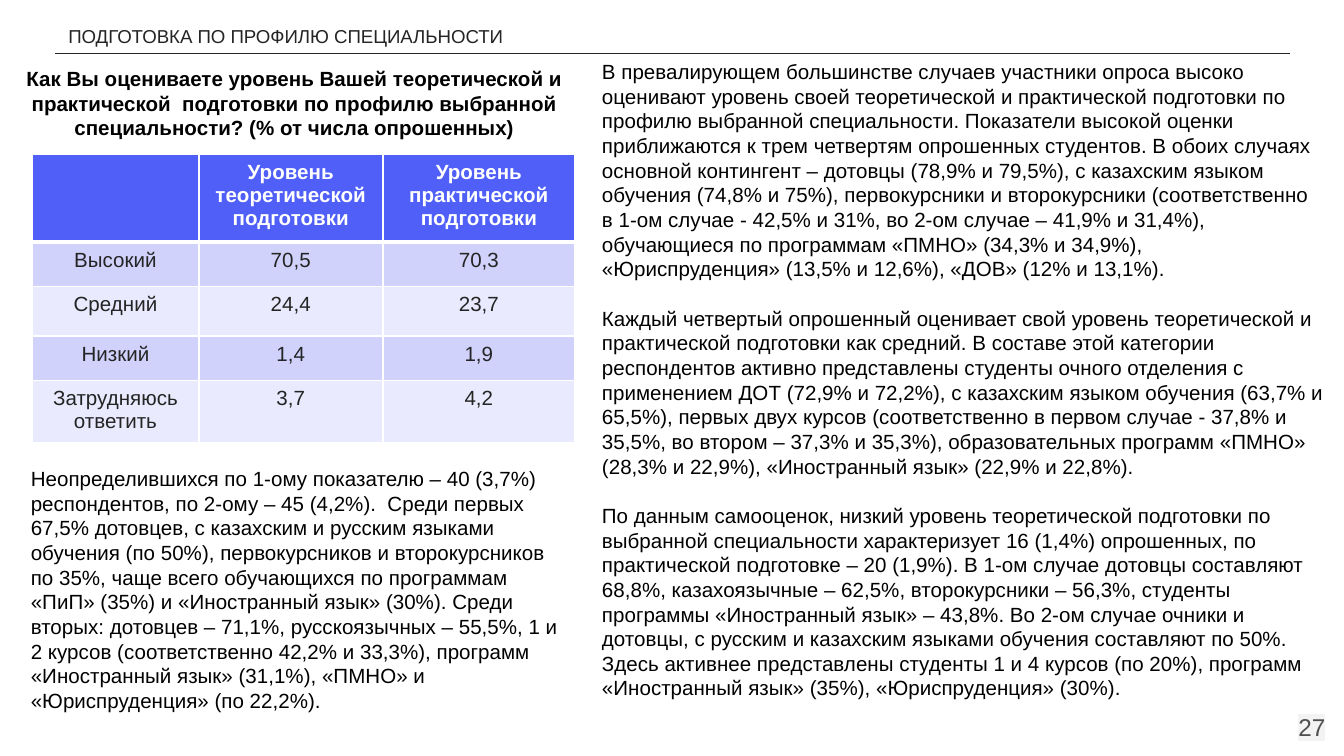
from lxml.etree import SubElement
from pptx import Presentation
from pptx.dml.color import RGBColor
from pptx.enum.shapes import MSO_CONNECTOR
from pptx.enum.text import MSO_ANCHOR, PP_ALIGN
from pptx.oxml.ns import qn
from pptx.util import Pt

BLACK = RGBColor(0x00, 0x00, 0x00)
WHITE = RGBColor(0xFF, 0xFF, 0xFF)
INK = RGBColor(0x24, 0x24, 0x24)
GREY = RGBColor(0x50, 0x50, 0x50)
PALE_GREY = RGBColor(0xF3, 0xF3, 0xF3)
BLUE = RGBColor(0x4F, 0x5F, 0xF7)
LILAC = RGBColor(0xD0, 0xD2, 0xFC)
PALE_LILAC = RGBColor(0xE9, 0xEA, 0xFD)

QUESTION = (
    "Как Вы оцениваете уровень Вашей теоретической и практической  подготовки "
    "по профилю выбранной специальности? (% от числа опрошенных)"
)
ANALYSIS = [
    "В превалирующем большинстве случаев участники опроса высоко оценивают уровень "
    "своей теоретической и практической подготовки по профилю выбранной специальности. "
    "Показатели высокой оценки приближаются к трем четвертям опрошенных студентов. "
    "В обоих случаях основной контингент – дотовцы (78,9% и 79,5%), с казахским языком "
    "обучения (74,8% и 75%), первокурсники и второкурсники (соответственно в 1-ом случае "
    "- 42,5% и 31%, во 2-ом случае – 41,9% и 31,4%), обучающиеся по программам «ПМНО» "
    "(34,3% и 34,9%), «Юриспруденция» (13,5% и 12,6%), «ДОВ» (12% и 13,1%).",
    "Каждый четвертый опрошенный оценивает свой уровень теоретической и практической "
    "подготовки как средний. В составе этой категории респондентов активно представлены "
    "студенты очного отделения с применением ДОТ (72,9% и 72,2%), с казахским языком "
    "обучения (63,7% и 65,5%), первых двух курсов (соответственно в первом случае - 37,8% "
    "и 35,5%, во втором – 37,3% и 35,3%), образовательных программ «ПМНО» (28,3% и 22,9%), "
    "«Иностранный язык» (22,9% и 22,8%).",
    "По данным самооценок, низкий уровень теоретической подготовки по выбранной "
    "специальности характеризует 16 (1,4%) опрошенных, по практической подготовке – 20 "
    "(1,9%). В 1-ом случае дотовцы составляют 68,8%, казахоязычные – 62,5%, второкурсники "
    "– 56,3%, студенты программы «Иностранный язык» – 43,8%. Во 2-ом случае очники и "
    "дотовцы, с русским и казахским языками обучения составляют по 50%. Здесь активнее "
    "представлены студенты 1 и 4 курсов (по 20%), программ «Иностранный язык» (35%), "
    "«Юриспруденция» (30%).",
]
UNDECIDED = (
    "Неопределившихся по 1-ому показателю – 40 (3,7%) респондентов, по 2-ому – 45 (4,2%).  "
    "Среди первых 67,5% дотовцев, с казахским и русским языками обучения (по 50%), "
    "первокурсников и второкурсников по 35%, чаще всего обучающихся по программам «ПиП» "
    "(35%) и «Иностранный язык» (30%). Среди вторых: дотовцев – 71,1%, русскоязычных – "
    "55,5%, 1 и 2 курсов (соответственно 42,2% и 33,3%), программ «Иностранный язык» "
    "(31,1%), «ПМНО» и «Юриспруденция» (по 22,2%)."
)
RATINGS = [
    ["", "Уровень теоретической подготовки", "Уровень практической подготовки"],
    ["Высокий", "70,5", "70,3"],
    ["Средний", "24,4", "23,7"],
    ["Низкий", "1,4", "1,9"],
    ["Затрудняюсь ответить", "3,7", "4,2"],
]


class SlideWriter:
    font = "Arial"
    size = 11
    leading = Pt(13.2)

    def __init__(self, page):
        self.page = page

    def span(self, para, text, color, size=size, bold=False, highlight=None):
        span = para.add_run()
        span.text = text
        span.font.size = Pt(size)
        span.font.bold = bold
        span.font.color.rgb = color
        if highlight is not None:
            mark = SubElement(span._r.get_or_add_rPr(), qn("a:highlight"))
            SubElement(mark, qn("a:srgbClr"), val=str(highlight))
        span.font.name = self.font

    def text(self, left, top, width, height, paragraphs, color=BLACK, inset=3.6,
             align=PP_ALIGN.LEFT, anchor=MSO_ANCHOR.TOP, leading=leading, **style):
        box = self.page.shapes.add_textbox(Pt(left), Pt(top), Pt(width), Pt(height))
        frame = box.text_frame
        frame.word_wrap = True
        frame.vertical_anchor = anchor
        frame.margin_left = frame.margin_right = Pt(7.2)
        frame.margin_top = frame.margin_bottom = Pt(inset)
        for index, text in enumerate(paragraphs):
            para = frame.add_paragraph() if index else frame.paragraphs[0]
            para.alignment = align
            para.line_spacing = leading
            if index:
                para.space_before = leading
            self.span(para, text, color, **style)

    def rule(self, left, right, top, color, weight):
        line = self.page.shapes.add_connector(
            MSO_CONNECTOR.STRAIGHT, Pt(left), Pt(top), Pt(right), Pt(top))
        line.line.color.rgb = color
        line.line.width = Pt(weight)
        SubElement(line._element.spPr, qn("a:effectLst"))

    def borders(self, cell, weights):
        properties = cell._tc.get_or_add_tcPr()
        for index, (side, weight) in enumerate(weights.items()):
            edge = SubElement(properties, qn(f"a:ln{side}"), w=str(Pt(weight)))
            fill = SubElement(edge, qn("a:solidFill"))
            SubElement(fill, qn("a:srgbClr"), val=str(WHITE))
            properties.insert(index, edge)

    def table(self, left, top, widths, heights, rows):
        table = self.page.shapes.add_table(
            len(rows), len(widths), Pt(left), Pt(top),
            Pt(sum(widths)), Pt(sum(heights))).table
        for column, width in zip(table.columns, widths):
            column.width = Pt(width)
        for r, (values, height) in enumerate(zip(rows, heights)):
            table.rows[r].height = Pt(height)
            header = r == 0
            for c, value in enumerate(values):
                cell = table.cell(r, c)
                cell.fill.solid()
                cell.fill.fore_color.rgb = BLUE if header else LILAC if r % 2 else PALE_LILAC
                self.borders(cell, {"L": 1, "R": 1, "T": 3 if r == 1 else 1,
                                    "B": 3 if header else 1})
                para = cell.text_frame.paragraphs[0]
                para.alignment = PP_ALIGN.CENTER
                if value:
                    self.span(para, value, WHITE if header else INK, bold=header)


def main():
    deck = Presentation()
    deck.slide_width, deck.slide_height = Pt(720), Pt(405)
    writer = SlideWriter(deck.slides.add_slide(deck.slide_layouts[6]))

    writer.rule(29.5, 691.2, 28.8, INK, 0.75)
    writer.text(29.5, 7.2, 259.2, 21.6, ["ПОДГОТОВКА ПО ПРОФИЛЮ СПЕЦИАЛЬНОСТИ"],
                INK, inset=7.2, leading=1.0, size=10)
    writer.text(673.9, 373.7, 43.2, 31, ["27"], GREY, inset=7.2, align=PP_ALIGN.RIGHT,
                anchor=MSO_ANCHOR.MIDDLE, leading=1.0, size=13, highlight=PALE_GREY)
    writer.text(0, 28.1, 315.4, 54.7, [QUESTION], inset=7.2,
                align=PP_ALIGN.CENTER, bold=True)
    writer.text(315.4, 28.1, 401.8, 353.5, ANALYSIS)
    writer.table(17.3, 82.8, [89.2, 98.6, 103], [45.2, 23.8, 26.6, 23.8, 32.6], RATINGS)
    writer.text(9.4, 246.2, 298, 140.4, [UNDECIDED])
    deck.save("out.pptx")


if __name__ == "__main__":
    main()
